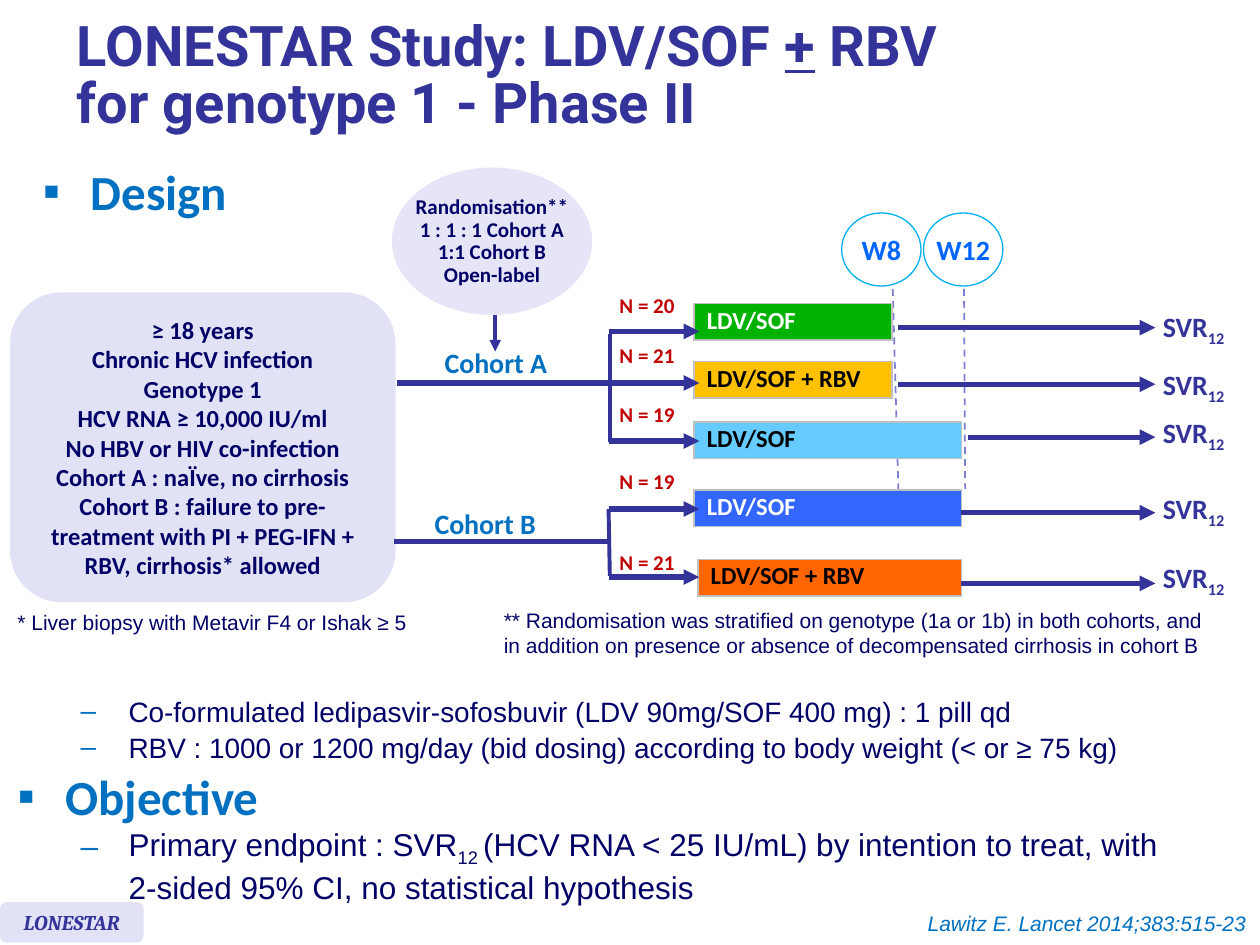
"""Build the LONESTAR study design slide."""
from lxml import etree
from pptx import Presentation
from pptx.dml.color import RGBColor
from pptx.enum.dml import MSO_LINE
from pptx.enum.shapes import MSO_CONNECTOR, MSO_SHAPE as SHAPE
from pptx.enum.text import MSO_ANCHOR as ANCHOR, MSO_AUTO_SIZE, PP_ALIGN as ALIGN
from pptx.oxml import parse_xml
from pptx.oxml.ns import nsdecls, qn
from pptx.util import Inches, Pt

rgb = RGBColor.from_string
NAVY, INDIGO, BLUE, RED = "000066", "333399", "0070C0", "C00000"
LAVENDER = "E2E2F6"


def write(tf, paras, size, color, font="Calibri", bold=True, italic=False,
          align=ALIGN.LEFT, spacing=None, wrap=False, bullet=None, indent=0.38):
    """Add paragraphs, each a list of (text, baseline) runs."""
    tf.word_wrap = wrap
    for paragraph in paras:
        p = tf.paragraphs[0]
        if p.runs:
            p = tf.add_paragraph()
        p.alignment = align
        p.line_spacing = spacing
        p.space_before = Pt(0)
        if bullet:
            pPr = p._p.get_or_add_pPr()
            pPr.set("marL", str(Inches(indent)))
            pPr.set("indent", str(Inches(-0.38)))
            clr = etree.SubElement(pPr, qn("a:buClr"))
            etree.SubElement(clr, qn("a:srgbClr"), val=BLUE)
            etree.SubElement(pPr, qn("a:buFont"), typeface="Arial")
            etree.SubElement(pPr, qn("a:buChar"), char=bullet)
        for text, baseline in paragraph:
            r = p.add_run()
            r.text = text
            f = r.font
            f.name, f.size, f.bold, f.italic = font, Pt(size), bold, italic
            f.color.rgb = rgb(color)
            if baseline:
                r._r.get_or_add_rPr().set("baseline", str(baseline))


def line(x1, y1, x2, y2, width=3, color=INDIGO, arrow=False, dash=False):
    """Draw a straight connector."""
    c = s.shapes.add_connector(MSO_CONNECTOR.STRAIGHT, Inches(x1), Inches(y1), Inches(x2), Inches(y2))
    c.line.width = Pt(width)
    c.line.color.rgb = rgb(color)
    if dash:
        c.line.dash_style = MSO_LINE.DASH
    if arrow:
        etree.SubElement(c.line._get_or_add_ln(), qn("a:tailEnd"), type="triangle")
    etree.SubElement(c._element.spPr, qn("a:effectLst"))


prs = Presentation()
prs.slide_width, prs.slide_height = Inches(10), Inches(7.5)
s = prs.slides.add_slide(prs.slide_layouts[4])
design, dosing, objective, spare = list(s.placeholders)[1:]
spare._element.getparent().remove(spare._element)

for sp, box in [
    (s.shapes.title, (0.51, 0.08, 9.13, 1.07)),
    (design, (0.24, 1.23, 1.98, 0.63)),
    (dosing, (0.04, 5.46, 9.47, 0.65)),
    (objective, (0.04, 6.03, 9.46, 0.97)),
]:
    sp.left, sp.top, sp.width, sp.height = map(Inches, box)
    sp.text_frame.vertical_anchor = ANCHOR.TOP
    sp.text_frame.auto_size = MSO_AUTO_SIZE.NONE

tf = s.shapes.title.text_frame
tf.vertical_anchor = ANCHOR.MIDDLE
write(tf, [[("LONESTAR Study: LDV/SOF ", 0), ("+", 0), ("\u00a0RBV", 0)]], 32, INDIGO, "Roboto",
      spacing=0.85, wrap=True)
p = tf.paragraphs[0]
p.runs[1].font.underline = True
p.add_line_break()
r = p.add_run()
r.text = "for genotype 1 - Phase II"
r.font.name, r.font.size, r.font.bold = "Roboto", Pt(32), True
r.font.color.rgb = rgb(INDIGO)

write(design.text_frame, [[("Design", 0)]], 28, BLUE, wrap=True, bullet="▪")
write(dosing.text_frame, [
    [("Co-formulated ledipasvir-sofosbuvir (LDV 90mg/SOF 400 mg) : 1 pill qd", 0)],
    [("RBV : 1000 or 1200 mg/day (bid dosing) according to body weight (< or ≥ 75 kg)", 0)],
], 16, NAVY, "Arial", bold=False, wrap=True, bullet="–", indent=0.88)
dosing.text_frame.paragraphs[1].space_before = Pt(1.5)
write(objective.text_frame, [[("Objective", 0)]], 28, BLUE, wrap=True, bullet="▪")
write(objective.text_frame, [[
    ("Primary endpoint : SVR", 0), ("12 ", -25000),
    ("(HCV RNA < 25 IU/mL) by intention to treat, with 2-sided 95% CI, no statistical hypothesis", 0),
]], 18, NAVY, "Arial", bold=False, wrap=True, bullet="–", indent=0.88)

line(7.65, 2.1, 7.66, 3.88, 1, "7E7ED4", dash=True)
line(7.08, 2.1, 7.13, 3.88, 1, "7E7ED4", dash=True)
line(3.93, 2.41, 3.93, 2.79, 2.25, arrow=True)

randomisation = ["Randomisation**", "1 : 1 : 1 Cohort A", "1:1 Cohort B", "Open-label"]
criteria = [
    "≥ 18 years", "Chronic HCV infection", "Genotype 1", "HCV RNA ≥ 10,000 IU/ml",
    "No HBV or HIV co-infection", "Cohort A : naÏve, no cirrhosis",
    "Cohort B : failure to pre-treatment with PI + PEG-IFN + RBV, cirrhosis* allowed",
]
for kind, box, fill, edge, inset, texts, style in [
    (SHAPE.OVAL, (3.11, 1.33, 1.59, 1.17), "E5E5F7", None, 0, randomisation,
     dict(size=12, color=NAVY, spacing=Pt(13))),
    (SHAPE.OVAL, (7.33, 1.69, 0.63, 0.58), "FFFFFF", "00B0F0", 0.1, ["W12"], dict(size=16, color="0066FF")),
    (SHAPE.OVAL, (6.68, 1.69, 0.63, 0.58), "FFFFFF", "00B0F0", 0.1, ["W8"], dict(size=16, color="0066FF")),
    (SHAPE.ROUNDED_RECTANGLE, (0.08, 2.32, 3.06, 2.46), LAVENDER, None, 0.02, criteria,
     dict(size=14, color=NAVY, wrap=True)),
    (SHAPE.ROUNDED_RECTANGLE, (0, 7.16, 1.14, 0.32), LAVENDER, None, 0.1, ["LONESTAR"],
     dict(size=12, color=INDIGO, font="Cambria", italic=True)),
]:
    sp = s.shapes.add_shape(kind, *map(Inches, box))
    sp.shadow.inherit = False
    sp.fill.solid()
    sp.fill.fore_color.rgb = rgb(fill)
    if edge:
        sp.line.color.rgb = rgb(edge)
        sp.line.width = Pt(0.75)
    else:
        sp.line.fill.background()
    tf = sp.text_frame
    tf.vertical_anchor = ANCHOR.MIDDLE
    tf.margin_left = tf.margin_right = Inches(inset)
    tf.margin_top = tf.margin_bottom = Inches(min(inset * 2.5, 0.05))
    write(tf, [[(t, 0)] for t in texts], align=ALIGN.CENTER, **style)

labels = [
    ((3.43, 2.69, 1.03, 0.37), [("Cohort A", 0)], dict(size=16, color=BLUE)),
    ((3.35, 3.97, 1.02, 0.37), [("Cohort B", 0)], dict(size=16, color=BLUE)),
    ((0.04, 4.79, 3.32, 0.3), [("* Liver biopsy with Metavir F4 or Ishak ≥ 5", 0)],
     dict(size=12, color=NAVY, font="Arial", bold=False)),
    ((3.9, 4.77, 5.91, 0.5),
     [("** Randomisation was stratified on genotype (1a or 1b) in both cohorts, and in addition on "
       "presence or absence of decompensated cirrhosis in cohort B", 0)],
     dict(size=12, color=NAVY, font="Arial", bold=False, wrap=True)),
    ((7.2, 7.18, 2.79, 0.3), [("Lawitz E. Lancet 2014;383:515-23", 0)],
     dict(size=12, color=BLUE, font="Arial", bold=False, italic=True, align=ALIGN.RIGHT)),
]

for drug, left, top, right, fill, color, n, n_top, in_y, out_x, out_y, svr_top in [
    ("LDV/SOF", 5.51, 2.41, 7.08, "00B200", "FFFFFF", 20, 2.27, 2.63, 7.13, 2.6, 2.41),
    ("LDV/SOF + RBV", 5.51, 2.87, 7.08, "FFC000", "000000", 21, 2.67, 3.04, 7.13, 3.05, 2.87),
    ("LDV/SOF", 5.51, 3.35, 7.63, "66CCFF", "000000", 19, 3.14, 3.5, 7.68, 3.47, 3.25),
    ("LDV/SOF", 5.51, 3.89, 7.63, "3366FF", "FFFFFF", 19, 3.67, 4.04, 7.63, 4.07, 3.85),
    ("LDV/SOF + RBV", 5.54, 4.44, 7.63, "FF6600", "000000", 21, 4.31, 4.58, 7.63, 4.63, 4.4),
]:
    table = s.shapes.add_table(1, 1, Inches(left), Inches(top), Inches(right - left), Inches(0.29)).table
    table.first_row = table.horz_banding = False
    cell = table.cell(0, 0)
    cell.vertical_anchor = ANCHOR.MIDDLE
    write(cell.text_frame, [[(drug, 0)]], 14, color, spacing=0.8, wrap=True)
    tcPr = cell._tc.get_or_add_tcPr()
    for side in "LRTB":
        tcPr.append(parse_xml(
            f'<a:ln{side} w="12700" {nsdecls("a")}><a:solidFill><a:srgbClr val="C0C0C0"/></a:solidFill></a:ln{side}>'))
    cell.fill.solid()
    cell.fill.fore_color.rgb = rgb(fill)
    line(4.83, in_y, 5.55, in_y, arrow=True)
    line(out_x, out_y, 9.17, out_y, arrow=True)
    labels += [
        ((4.81, n_top, 0.65, 0.3), [(f"N = {n}", 0)], dict(size=12, color=RED, align=ALIGN.CENTER)),
        ((9.13, svr_top, 0.72, 0.37), [("SVR", 0), ("12", -25000)], dict(size=16, color=INDIGO)),
    ]

for box, runs, style in labels:
    sp = s.shapes.add_textbox(*map(Inches, box))
    write(sp.text_frame, [runs], **style)

line(3.15, 3.04, 4.84, 3.04)
line(3.13, 4.3, 4.83, 4.3)
line(4.84, 3.51, 4.84, 2.65, 2.25)
line(4.84, 4.57, 4.83, 4.04, 2.25)

prs.save("out.pptx")
